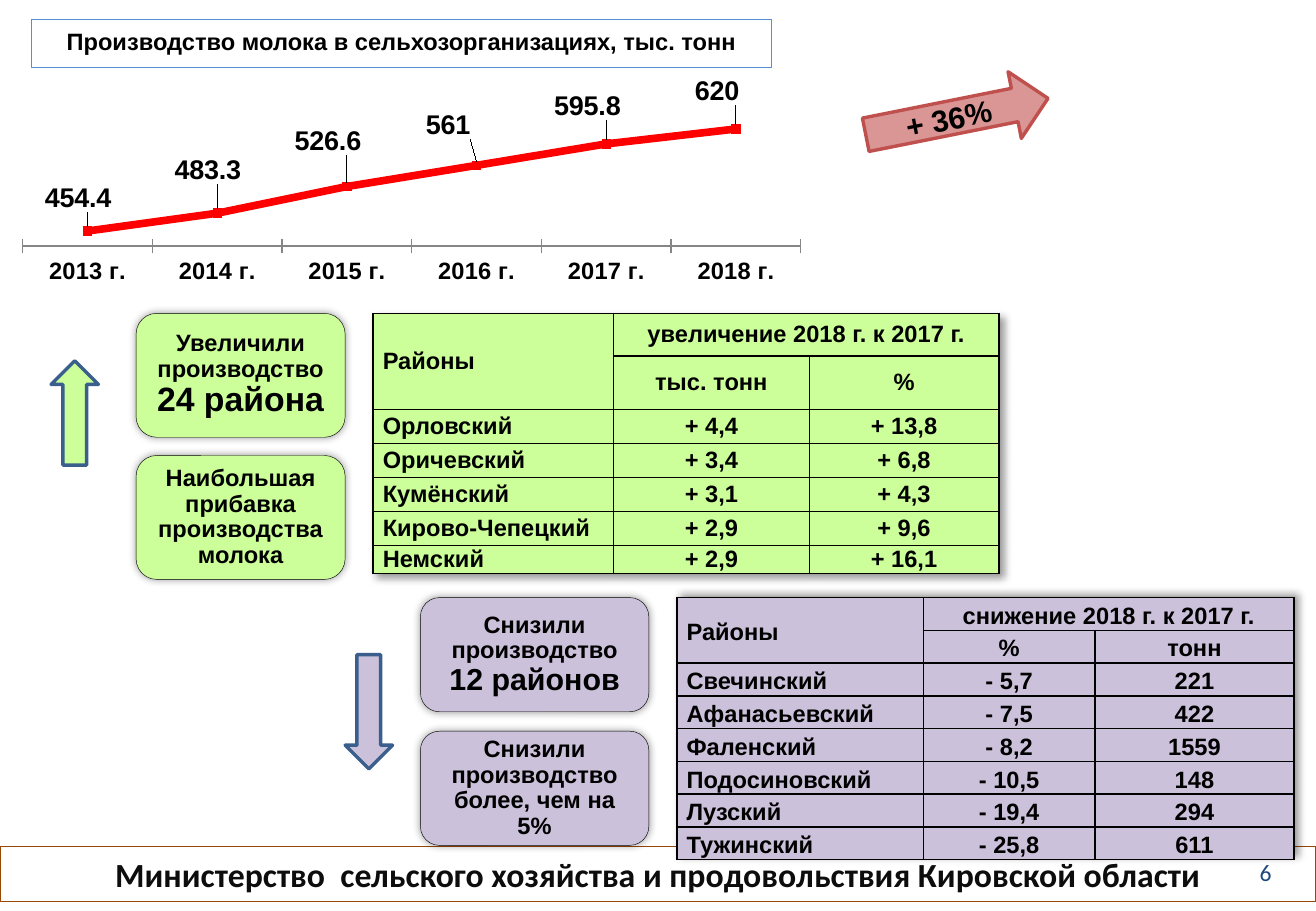
from lxml import etree
from pptx import Presentation
from pptx.chart.data import CategoryChartData
from pptx.dml.color import RGBColor
from pptx.enum.chart import XL_CHART_TYPE, XL_LABEL_POSITION, XL_MARKER_STYLE, XL_TICK_MARK
from pptx.enum.shapes import MSO_SHAPE
from pptx.enum.text import MSO_ANCHOR, MSO_AUTO_SIZE, PP_ALIGN
from pptx.oxml import parse_xml
from pptx.oxml.ns import nsdecls, qn
from pptx.util import Pt

PX = 9144  # one hundredth of an inch
LEFT, CENTER = PP_ALIGN.LEFT, PP_ALIGN.CENTER
TOP, MIDDLE = MSO_ANCHOR.TOP, MSO_ANCHOR.MIDDLE
RECT, CARD = MSO_SHAPE.RECTANGLE, MSO_SHAPE.ROUNDED_RECTANGLE
UP, DOWN, RIGHT = MSO_SHAPE.UP_ARROW, MSO_SHAPE.DOWN_ARROW, MSO_SHAPE.RIGHT_ARROW
ABOVE, SQUARE, CROSS = XL_LABEL_POSITION.ABOVE, XL_MARKER_STYLE.SQUARE, XL_TICK_MARK.CROSS

COLORS = {
    "black": "000000", "white": "FFFFFF", "green": "CCFF99", "lilac": "CCC1DA",
    "arrow_edge": "3A5F8C", "title_edge": "558ED5", "footer_edge": "984807",
    "footer_text": "0D0D0D", "page": "1F497D", "red": "FF0000",
    "pink": "D99694", "pink_edge": "C0504D", "axis": "868686",
}

MILK = {"2013 г.": 454.4, "2014 г.": 483.3, "2015 г.": 526.6,
        "2016 г.": 561, "2017 г.": 595.8, "2018 г.": 620}
LABEL_SHIFTS = [(-0.01, -0.04), (-0.01, -0.08), (-0.02, -0.09),
                (-0.03, -0.07), (-0.02, -0.06), (-0.02, -0.06)]

GROWTH = {
    "color": "green", "arrow": UP, "arrow_box": (0, 39, 39, 86),
    "card_left": 70, "card_size": (172, 102), "card_pitch": 117, "card_inset": 10,
    "cards": [[("Увеличили производство ", 14), ("24 района", 20)],
              [("Наибольшая прибавка производства молока", 14)]],
    "table_left": 265, "columns": [198, 161, 156],
    "rows": [35, 44, 28, 28, 28, 28, 23], "spacing": 1.0, "shadow_angle": 45,
    "cells": [["Районы", "увеличение 2018 г. к 2017 г.", ""],
              ["", "тыс. тонн", "%"],
              ["Орловский", "+ 4,4", "+ 13,8"],
              ["Оричевский", "+ 3,4", "+ 6,8"],
              ["Кумёнский", "+ 3,1", "+ 4,3"],
              ["Кирово-Чепецкий", "+ 2,9", "+ 9,6"],
              ["Немский", "+ 2,9", "+ 16,1"]],
}
DECLINE = {
    "color": "lilac", "arrow": DOWN, "arrow_box": (0, 47, 39, 94),
    "card_left": 62, "card_size": (188, 94), "card_pitch": 110, "card_inset": 14,
    "cards": [[("Снизили производство ", 14), ("12 районов", 18)],
              [("Снизили производство более, чем на 5%", 14)]],
    "table_left": 273, "columns": [203, 141, 164],
    "rows": [27] * 8, "spacing": 1.15, "shadow_angle": 315,
    "cells": [["Районы", "снижение 2018 г. к 2017 г.", ""],
              ["", "%", "тонн"],
              ["Свечинский", "- 5,7", "221"],
              ["Афанасьевский", "- 7,5", "422"],
              ["Фаленский", "- 8,2", "1559"],
              ["Подосиновский", "- 10,5", "148"],
              ["Лузский", "- 19,4", "294"],
              ["Тужинский", "- 25,8", "611"]],
}


def rgb(name):
    return RGBColor.from_string(COLORS[name])


def emu(box):
    return [value * PX for value in box]


def style_font(font, size, color="black", face="Arial", bold=True):
    font.size, font.name, font.bold = Pt(size), face, bold
    font.color.rgb = rgb(color)


def write(frame, runs, align=CENTER, spacing=1.0, **font):
    paragraph = frame.paragraphs[0]
    paragraph.alignment, paragraph.line_spacing = align, spacing
    for text, size in runs:
        run = paragraph.add_run()
        run.text = text
        style_font(run.font, size, **font)


def set_frame(frame, side=10, edge=5, anchor=MIDDLE):
    frame.word_wrap, frame.auto_size, frame.vertical_anchor = True, MSO_AUTO_SIZE.NONE, anchor
    frame.margin_left = frame.margin_right = side * PX
    frame.margin_top = frame.margin_bottom = edge * PX


def paint(shape, fill, line, width):
    if fill:
        shape.fill.solid()
        shape.fill.fore_color.rgb = rgb(fill)
    else:
        shape.fill.background()
    shape.line.color.rgb = rgb(line)
    shape.line.width = Pt(width)


def add_preset(slide, kind, box, fill, line, width):
    shape = slide.shapes.add_shape(kind, *emu(box))
    shape.shadow.inherit = False
    paint(shape, fill, line, width)
    return shape


def cast_shadow(effects, distance=0, angle=0):
    effects.append(parse_xml(
        f'<a:outerShdw {nsdecls("a")} blurRad="{Pt(5)}" dist="{Pt(distance)}" '
        f'dir="{angle * 60000}" algn="ctr" rotWithShape="0"><a:srgbClr val="{COLORS["black"]}">'
        '<a:alpha val="40000"/></a:srgbClr></a:outerShdw>'))


def set_title(slide, box):
    title = slide.shapes.title
    title.left, title.top, title.width, title.height = emu(box)
    title._element.spPr.append(parse_xml(
        f'<a:prstGeom {nsdecls("a")} prst="roundRect"><a:avLst/></a:prstGeom>'))
    paint(title, "white", "title_edge", 0.25)
    set_frame(title.text_frame)
    write(title.text_frame, [("Производство молока в сельхозорганизациях, тыс. тонн", 14)], spacing=0.9)


def manual_layout(x, y, size=None):
    values = [("xMode", "edge"), ("yMode", "edge")] if size else []
    values += [("x", x), ("y", y)]
    if size:
        values.insert(0, ("layoutTarget", "inner"))
        values += [("w", size[0]), ("h", size[1])]
    parts = "".join(f'<c:{tag} val="{value}"/>' for tag, value in values)
    return parse_xml(f'<c:layout {nsdecls("c")}><c:manualLayout>{parts}</c:manualLayout></c:layout>')


def add_milk_chart(slide, box):
    data = CategoryChartData()
    data.categories = list(MILK)
    data.add_series("Молоко", list(MILK.values()))
    chart = slide.shapes.add_chart(XL_CHART_TYPE.LINE_MARKERS, *emu(box), data).chart
    chart.has_legend = chart.has_title = False
    style_font(chart.font, 14)
    # Axes
    years, tonnes = chart.category_axis, chart.value_axis
    tonnes.visible = tonnes.has_major_gridlines = False
    tonnes.minimum_scale, tonnes.maximum_scale = 430, 630
    years.major_tick_mark = CROSS
    years.format.line.color.rgb = rgb("axis")
    style_font(years.tick_labels.font, 14)
    # Line and markers
    milk = chart.plots[0].series[0]
    milk.smooth = False
    milk.format.line.color.rgb = rgb("red")
    milk.format.line.width = Pt(4.5)
    milk.marker.style, milk.marker.size = SQUARE, 5
    milk.marker.format.fill.solid()
    milk.marker.format.fill.fore_color.rgb = rgb("red")
    milk.marker.format.line.color.rgb = rgb("red")
    # Value labels
    for index in range(len(MILK)):
        label = milk.points[index].data_label
        style_font(label.font, 16)
        label.position = ABOVE
    for label, shift in zip(milk._element.xpath(".//c:dLbl"), LABEL_SHIFTS):
        label.insert(1, manual_layout(*shift))
    # Plot area
    plot_area = chart._chartSpace.chart.plotArea
    for layout in plot_area.findall(qn("c:layout")):
        plot_area.remove(layout)
    plot_area.insert(0, manual_layout(0.07, 0.267, (0.82, 0.5)))


def add_border(cell):
    for side in ("lnL", "lnR", "lnT", "lnB"):
        cell._tc.get_or_add_tcPr().append(parse_xml(
            f'<a:{side} {nsdecls("a")} w="{Pt(1)}"><a:solidFill>'
            f'<a:srgbClr val="{COLORS["black"]}"/></a:solidFill></a:{side}>'))


def add_district_table(slide, left, top, panel):
    columns, rows = panel["columns"], panel["rows"]
    box = (left, top, sum(columns), sum(rows))
    table = slide.shapes.add_table(len(rows), len(columns), *emu(box)).table
    table.first_row = table.horz_banding = False
    properties = table._tbl.tblPr
    effects = etree.Element(qn("a:effectLst"))
    properties.insert(0, effects)
    cast_shadow(effects, 3, panel["shadow_angle"])
    for column, width in zip(table.columns, columns):
        column.width = width * PX
    for r, height in enumerate(rows):
        table.rows[r].height = height * PX
        for c, text in enumerate(panel["cells"][r]):
            cell = table.cell(r, c)
            add_border(cell)
            cell.fill.solid()
            cell.fill.fore_color.rgb = rgb(panel["color"])
            cell.vertical_anchor = MIDDLE
            cell.margin_left = cell.margin_right = 8 * PX
            cell.margin_top = cell.margin_bottom = 0
            if text:
                write(cell.text_frame, [(text, 14)], align=CENTER if c else LEFT,
                      spacing=panel["spacing"])
    table.cell(0, 0).merge(table.cell(1, 0))
    table.cell(0, 1).merge(table.cell(0, 2))


def add_panel(slide, left, top, panel):
    x, y, width, height = panel["arrow_box"]
    add_preset(slide, panel["arrow"], (left + x, top + y, width, height),
               panel["color"], "arrow_edge", 2)
    for index, runs in enumerate(panel["cards"]):
        box = (left + panel["card_left"], top + index * panel["card_pitch"], *panel["card_size"])
        card = add_preset(slide, CARD, box, panel["color"], "black", 0.25)
        cast_shadow(card._element.spPr.find(qn("a:effectLst")))
        set_frame(card.text_frame, side=panel["card_inset"])
        write(card.text_frame, runs, spacing=0.9)
    add_district_table(slide, left + panel["table_left"], top, panel)


def add_growth_arrow(slide, box):
    growth = add_preset(slide, RIGHT, box, "pink", "pink_edge", 2)
    growth.rotation = 348.7
    set_frame(growth.text_frame, edge=0)
    write(growth.text_frame, [("+ 36%", 18)])


def add_footer(slide, box):
    left, top, width, height = box
    ministry = add_preset(slide, RECT, box, None, "footer_edge", 0.75)
    set_frame(ministry.text_frame, 11, 6, TOP)
    write(ministry.text_frame,
          [("Министерство  сельского хозяйства и продовольствия Кировской области", 20)],
          face="Calibri", color="footer_text")
    page = slide.shapes.add_textbox(*emu((left + width - 77, top + 1, 71, 40)))
    set_frame(page.text_frame, 11, 6)
    write(page.text_frame, [("6", 14)], face="Calibri", color="page", bold=False)


def main():
    deck = Presentation()
    deck.slide_width, deck.slide_height = emu((1083, 750))
    slide = deck.slides.add_slide(deck.slide_layouts[5])
    set_title(slide, (26, 16, 609, 39))
    add_footer(slide, (0, 697, 1083, 45))
    add_milk_chart(slide, (-36, 47, 781, 203))
    add_growth_arrow(slide, (711, 68, 153, 56))
    add_panel(slide, 42, 258, GROWTH)
    add_panel(slide, 284, 492, DECLINE)
    deck.save("out.pptx")


if __name__ == "__main__":
    main()
